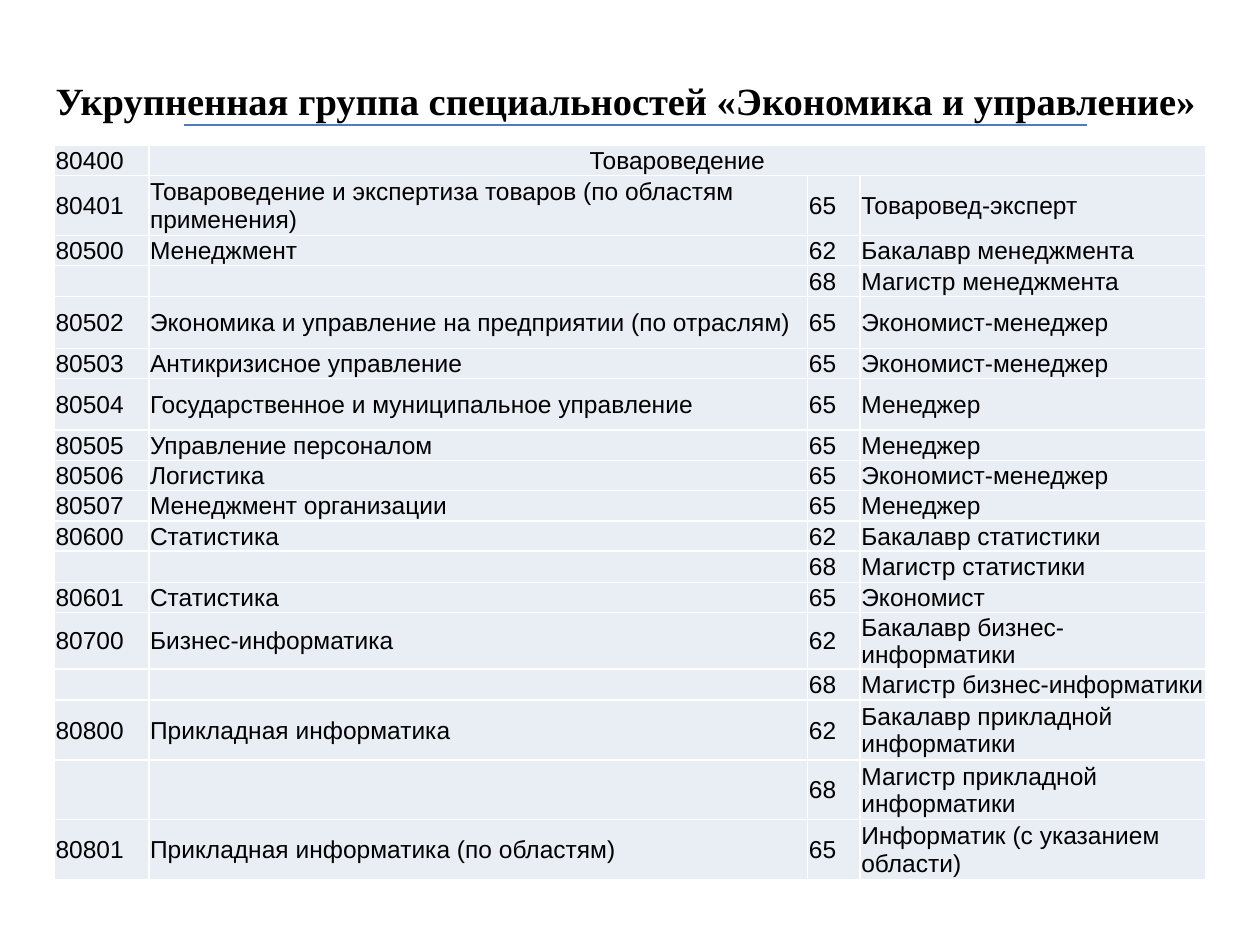
from lxml import etree
from pptx import Presentation
from pptx.dml.color import RGBColor
from pptx.enum.shapes import MSO_CONNECTOR
from pptx.enum.text import MSO_ANCHOR, MSO_AUTO_SIZE, PP_ALIGN
from pptx.oxml.ns import qn
from pptx.util import Pt

STRAIGHT = MSO_CONNECTOR.STRAIGHT
MIDDLE = MSO_ANCHOR.MIDDLE
NO_AUTOFIT = MSO_AUTO_SIZE.NONE
LEFT, CENTER = PP_ALIGN.LEFT, PP_ALIGN.CENTER

BLACK = RGBColor(0x00, 0x00, 0x00)
RULE_BLUE = RGBColor(0x4B, 0x7E, 0xBC)
CELL_FILL = RGBColor(0xE9, 0xED, 0xF4)

TITLE = "Укрупненная группа специальностей «Экономика и управление»"
TITLE_FONT = {"name": "Times New Roman", "size": Pt(22), "bold": True}
CELL_SIZE = 14
CELL_FONT = {"name": "Arial", "size": Pt(CELL_SIZE), "bold": False}
CELL_FRAME = {"vertical_anchor": MIDDLE, "margin_left": Pt(0.72),
              "margin_right": Pt(0.72), "margin_top": Pt(0.72),
              "margin_bottom": Pt(0)}

COL_WIDTHS = (54, 376.5, 30, 197.5)
SINGLE, MEDIUM, DOUBLE = 17.3, 29.5, 34.2

# Row height, code, speciality, level, qualification
ROWS = [
    (SINGLE, "80400", "Товароведение", "", ""),
    (DOUBLE, "80401", "Товароведение и экспертиза товаров (по областям применения)",
     "65", "Товаровед-эксперт"),
    (SINGLE, "80500", "Менеджмент", "62", "Бакалавр менеджмента"),
    (SINGLE, "", "", "68", "Магистр менеджмента"),
    (MEDIUM, "80502", "Экономика и управление на предприятии (по отраслям)",
     "65", "Экономист-менеджер"),
    (SINGLE, "80503", "Антикризисное управление", "65", "Экономист-менеджер"),
    (MEDIUM, "80504", "Государственное и муниципальное управление", "65", "Менеджер"),
    (SINGLE, "80505", "Управление персоналом", "65", "Менеджер"),
    (SINGLE, "80506", "Логистика", "65", "Экономист-менеджер"),
    (SINGLE, "80507", "Менеджмент организации", "65", "Менеджер"),
    (SINGLE, "80600", "Статистика", "62", "Бакалавр статистики"),
    (SINGLE, "", "", "68", "Магистр статистики"),
    (SINGLE, "80601", "Статистика", "65", "Экономист"),
    (SINGLE, "80700", "Бизнес-информатика", "62", "Бакалавр бизнес-информатики"),
    (SINGLE, "", "", "68", "Магистр бизнес-информатики"),
    (DOUBLE, "80800", "Прикладная информатика", "62", "Бакалавр прикладной информатики"),
    (DOUBLE, "", "", "68", "Магистр прикладной информатики"),
    (DOUBLE, "80801", "Прикладная информатика (по областям)",
     "65", "Информатик (с указанием области)"),
]


def set_attrs(obj, values):
    for name, value in values.items():
        setattr(obj, name, value)


def write(p, text, font, align):
    p.alignment = align
    r = p.add_run()
    r.text = text
    set_attrs(r.font, font)
    r.font.color.rgb = BLACK


def add_title(s):
    sp = s.shapes.title
    set_attrs(sp, {"left": Pt(14.4), "top": Pt(20), "width": Pt(686), "height": Pt(68.5)})
    tf = sp.text_frame
    set_attrs(tf, {"word_wrap": True, "auto_size": NO_AUTOFIT,
                   "vertical_anchor": MIDDLE, "margin_top": Pt(9)})
    write(tf.paragraphs[0], TITLE, TITLE_FONT, CENTER)


def add_rule(s, x1, x2, y):
    line = s.shapes.add_connector(STRAIGHT, Pt(x1), Pt(y), Pt(x2), Pt(y))
    line.line.color.rgb = RULE_BLUE
    line.line.width = Pt(0.75)
    etree.SubElement(line._element.spPr, qn("a:effectLst"))


def fill_cell(cell, text, align):
    set_attrs(cell, CELL_FRAME)
    cell.fill.solid()
    cell.fill.fore_color.rgb = CELL_FILL
    p = cell.text_frame.paragraphs[0]
    if text:
        write(p, text, CELL_FONT, align)
    else:
        # Keeps an empty cell from stretching its row
        etree.SubElement(p._p, qn("a:endParaRPr"), sz=str(CELL_SIZE * 100))


def add_speciality_table(s, left, top):
    height = sum(row[0] for row in ROWS)
    frame = s.shapes.add_table(len(ROWS), len(COL_WIDTHS), Pt(left), Pt(top),
                               Pt(sum(COL_WIDTHS)), Pt(height))
    table = frame.table
    set_attrs(table, {"first_row": False, "horz_banding": False})
    for column, width in zip(table.columns, COL_WIDTHS):
        column.width = Pt(width)
    for i, (row_height, *texts) in enumerate(ROWS):
        table.rows[i].height = Pt(row_height)
        for j, text in enumerate(texts):
            fill_cell(table.cell(i, j), text, CENTER if (i, j) == (0, 1) else LEFT)
    # Group heading spans the last three columns
    table.cell(0, 1).merge(table.cell(0, 3))


def main():
    prs = Presentation()
    prs.slide_width, prs.slide_height = Pt(720), Pt(540)
    s = prs.slides.add_slide(prs.slide_layouts[5])
    add_title(s)
    add_rule(s, 105, 621, 71.4)
    add_speciality_table(s, 31, 83)
    prs.save("out.pptx")


if __name__ == "__main__":
    main()
